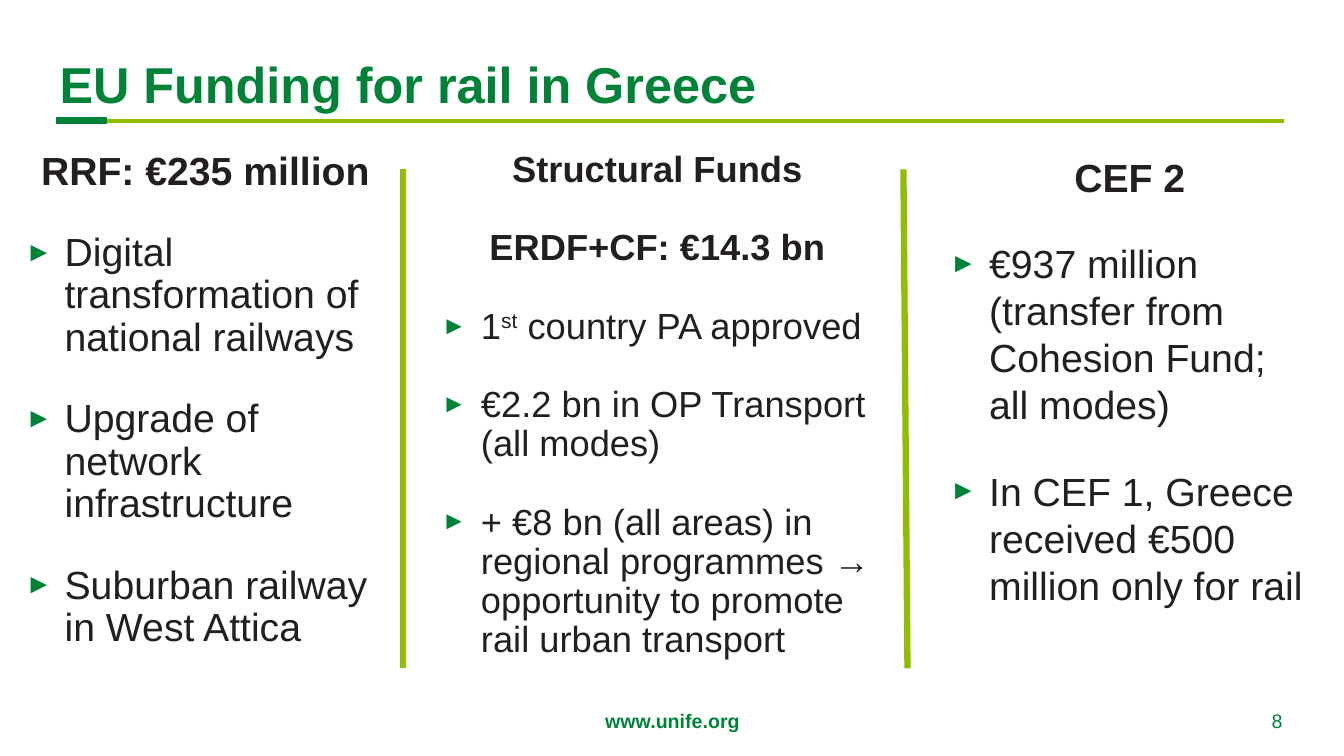
from lxml.etree import SubElement
from pptx import Presentation
from pptx.dml.color import RGBColor
from pptx.enum.shapes import MSO_CONNECTOR
from pptx.enum.text import MSO_ANCHOR, MSO_AUTO_SIZE, PP_ALIGN
from pptx.oxml.ns import qn
from pptx.util import Inches, Pt

WIDTH, HEIGHT = Inches(13.33), Inches(7.5)
GREEN, LIME, INK = "008338", "8FBE00", "231F20"
FONT = "Arial"
BULLET_INDENT = Inches(0.39)

# left, top, width, height (percent of the slide), text size, line spacing, headings, bullets
# A bullet is a list of (text, is_superscript) runs.
COLUMNS = [
    ((1.88, 20, 26.78, 68.4), 28, 0.9, ["RRF: €235 million"], [
        [("Digital transformation of national railways", False)],
        [("Upgrade of network infrastructure", False)],
        [("Suburban railway in West Attica", False)],
    ]),
    ((32.86, 20, 32.11, 72.8), 25.9, 0.9, ["Structural Funds", "ERDF+CF: €14.3 bn"], [
        [("1", False), ("st", True), (" country PA approved", False)],
        [("€2.2 bn in OP Transport (all modes)", False)],
        [("+ €8 bn (all areas) in regional programmes → "
          "opportunity to promote rail urban transport", False)],
    ]),
    ((70.67, 20.27, 26.78, 68.4), 28, 1, ["CEF 2"], [
        [("€937 million (transfer from Cohesion Fund; all modes)", False)],
        [("In CEF 1, Greece received €500 million only for rail", False)],
    ]),
]


def rgb(color):
    return RGBColor.from_string(color)


def across(percent):
    return round(WIDTH * percent / 100)


def down(percent):
    return round(HEIGHT * percent / 100)


def place(sp, box):
    """Position a shape by percentages of the slide and clear its text insets."""
    left, top, width, height = box
    sp.left, sp.top = across(left), down(top)
    sp.width, sp.height = across(width), down(height)
    tf = sp.text_frame
    tf.word_wrap = True
    tf.auto_size = MSO_AUTO_SIZE.NONE
    tf.margin_left = tf.margin_right = tf.margin_top = tf.margin_bottom = 0
    return tf


def add_text_frame(s, box, anchor=MSO_ANCHOR.TOP):
    tf = place(s.shapes.add_textbox(0, 0, 0, 0), box)
    tf.vertical_anchor = anchor
    return tf


def add_run(p, text, size, color, bold=False, superscript=False):
    r = p.add_run()
    r.text = text
    r.font.name = FONT
    r.font.size = Pt(size)
    r.font.bold = bold
    r.font.color.rgb = rgb(color)
    if superscript:
        r.font._element.set("baseline", "30000")


def add_bullet(p):
    pPr = p._p.get_or_add_pPr()
    pPr.set("marL", str(BULLET_INDENT))
    pPr.set("indent", str(-BULLET_INDENT))
    color = SubElement(pPr, qn("a:buClr"))
    SubElement(color, qn("a:srgbClr"), val=GREEN)
    SubElement(pPr, qn("a:buSzPct"), val="70000")
    SubElement(pPr, qn("a:buFont"), typeface=FONT)
    SubElement(pPr, qn("a:buChar"), char="►")


def add_spaced_paragraph(tf, line_spacing, first):
    p = tf.paragraphs[0] if first else tf.add_paragraph()
    p.line_spacing = line_spacing
    p.space_before = Pt(0 if first else 10)
    p.space_after = Pt(18)
    return p


def add_column(s, box, size, line_spacing, headings, bullets):
    tf = add_text_frame(s, box)
    for i, heading in enumerate(headings):
        p = add_spaced_paragraph(tf, line_spacing, first=i == 0)
        p.alignment = PP_ALIGN.CENTER
        add_run(p, heading, size, INK, bold=True)
    for runs in bullets:
        p = add_spaced_paragraph(tf, line_spacing, first=False)
        p.alignment = PP_ALIGN.LEFT
        add_bullet(p)
        for text, superscript in runs:
            add_run(p, text, size, INK, superscript=superscript)


def add_line(s, start, end, color, weight):
    line = s.shapes.add_connector(
        MSO_CONNECTOR.STRAIGHT,
        across(start[0]), down(start[1]), across(end[0]), down(end[1]))
    line.line.color.rgb = rgb(color)
    line.line.width = Pt(weight)
    SubElement(line._element.spPr, qn("a:effectLst"))


def add_title(s, text):
    tf = place(s.shapes.title, (4.43, 7.87, 91, 7.73))
    tf.vertical_anchor = MSO_ANCHOR.TOP
    p = tf.paragraphs[0]
    p.alignment = PP_ALIGN.LEFT
    p.line_spacing = 0.9
    add_run(p, text, 36, GREEN, bold=True)


def add_footer(s, box, text, alignment, bold):
    p = add_text_frame(s, box, MSO_ANCHOR.MIDDLE).paragraphs[0]
    p.alignment = alignment
    add_run(p, text, 14, GREEN, bold)


def main():
    prs = Presentation()
    prs.slide_width, prs.slide_height = WIDTH, HEIGHT
    s = prs.slides.add_slide(prs.slide_layouts[5])

    add_line(s, (5.48, 16), (95.57, 16), LIME, 2.25)
    add_line(s, (4.2, 16), (7.95, 16), GREEN, 5)
    add_title(s, "EU Funding for rail in Greece")
    for column in COLUMNS:
        add_column(s, *column)
    for top_x, bottom_x in [(30, 30), (67.22, 67.52)]:
        add_line(s, (top_x, 22.4), (bottom_x, 88.4), LIME, 4.5)
    add_footer(s, (43.89, 94, 12.3, 2.53), "www.unife.org", PP_ALIGN.CENTER, True)
    add_footer(s, (70.67, 92.67, 24.76, 5.33), "8", PP_ALIGN.RIGHT, False)

    prs.save("out.pptx")


if __name__ == "__main__":
    main()
